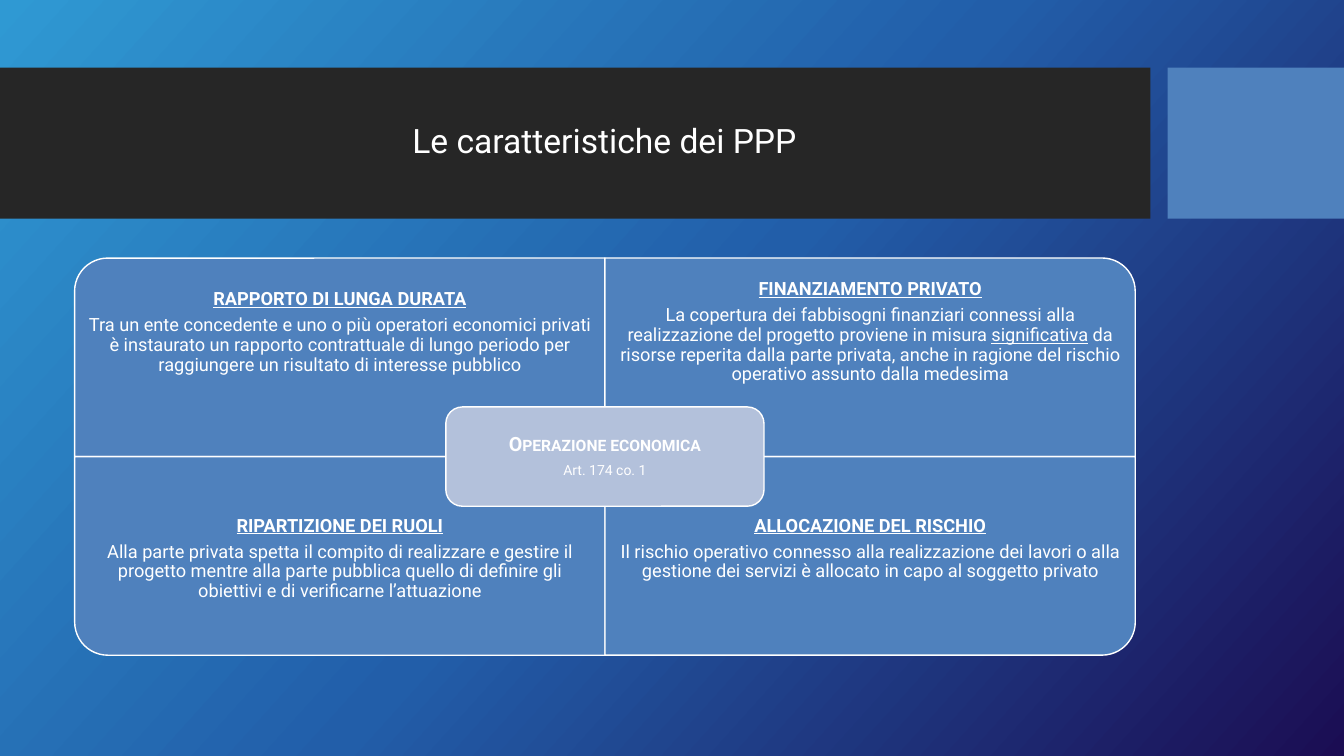
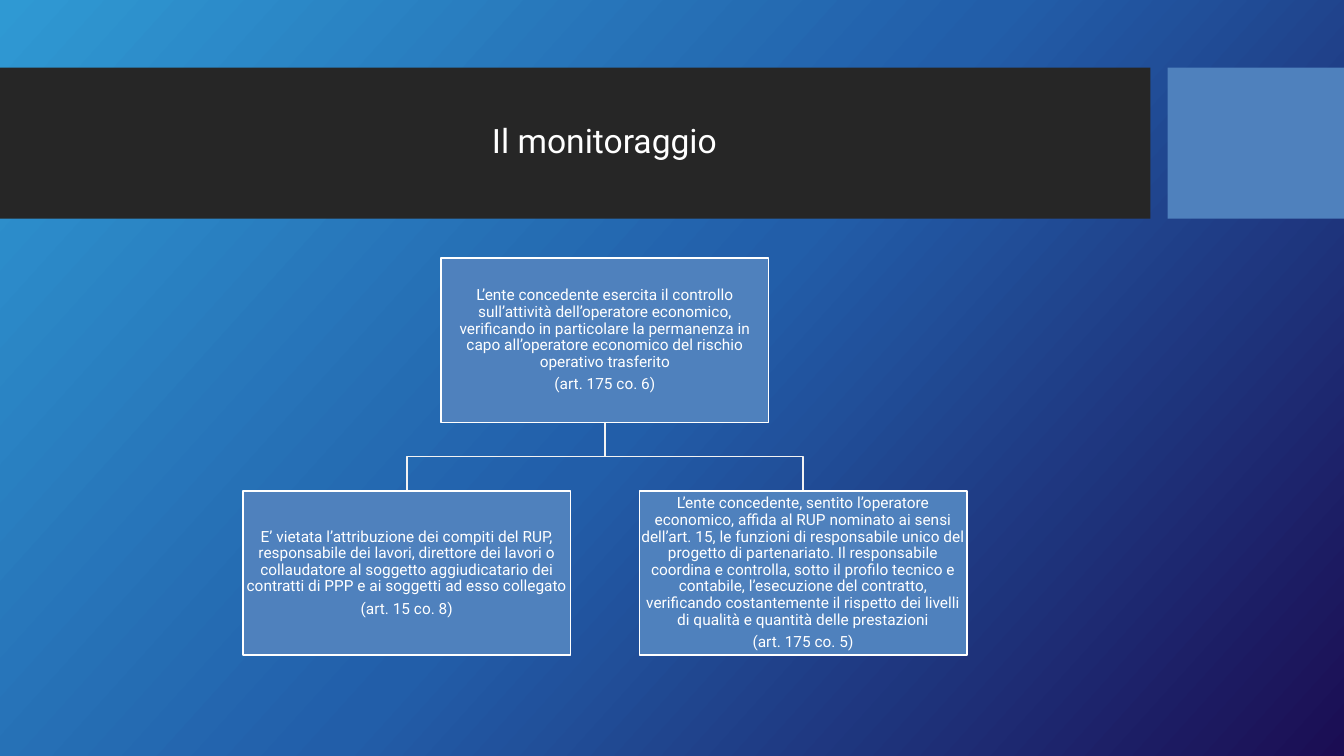
from collections import namedtuple
from copy import deepcopy

from pptx import Presentation
from pptx.dml.color import RGBColor
from pptx.enum.shapes import MSO_SHAPE
from pptx.enum.text import MSO_ANCHOR, MSO_AUTO_SIZE, PP_ALIGN
from pptx.util import Inches, Pt

Box = namedtuple("Box", "left top width height")

FONT = "Roboto"
WHITE, BLUE, PALE_BLUE, DARK, CONNECTOR_GREY = "FFFFFF", "4F81BD", "B3C1DB", "262626", "F2F2F2"
GRADIENT = [(0, "2F99D3"), (0.5, "225EA9"), (1, "1B0D53")]
BANDS = [(Box(0, 0.67, 11.41, 1.5), DARK), (Box(11.58, 0.67, 1.75, 1.5), BLUE)]
TITLE_BOX = Box(0.74, 0.82, 10.51, 1.18)
DIAGRAM_BOX = Box(0.74, 2.56, 10.52, 3.94)
HEADING = {"bold": True, "underline": True}
UNDERLINED = {"underline": True}

QUADRANTS = [
    (270, "RAPPORTO DI LUNGA DURATA", [
        ("Tra un ente concedente e uno o più operatori economici privati è instaurato un rapporto "
         "contrattuale di lungo periodo per raggiungere un risultato di interesse pubblico", {})]),
    (0, "FINANZIAMENTO PRIVATO", [
        ("La copertura dei fabbisogni finanziari connessi alla realizzazione del progetto proviene "
         "in misura ", {}),
        ("significativa", UNDERLINED),
        (" da risorse reperita dalla parte privata, anche in ragione del rischio operativo assunto "
         "dalla medesima", {})]),
    (180, "RIPARTIZIONE DEI RUOLI", [
        ("Alla parte privata spetta il compito di realizzare e gestire il progetto mentre alla parte "
         "pubblica quello di definire gli obiettivi e di verificarne l’attuazione", {})]),
    (90, "ALLOCAZIONE DEL RISCHIO", [
        ("Il rischio operativo connesso alla realizzazione dei lavori o alla gestione dei servizi è "
         "allocato in capo al soggetto privato", {})]),
]

PARENT_NODE = (
    "L’ente concedente esercita il controllo sull’attività dell’operatore economico, verificando in "
    "particolare la permanenza in capo all’operatore economico del rischio operativo trasferito",
    "(art. 175 co. 6)")
CHILD_NODES = [
    ("E’ vietata l’attribuzione dei compiti del RUP, responsabile dei lavori, direttore dei lavori o "
     "collaudatore al soggetto aggiudicatario dei contratti di PPP e ai soggetti ad esso collegato",
     "(art. 15 co. 8)"),
    ("L’ente concedente, sentito l’operatore economico, affida al RUP nominato ai sensi dell’art. 15, "
     "le funzioni di responsabile unico del progetto di partenariato. Il responsabile coordina e "
     "controlla, sotto il profilo tecnico e contabile, l’esecuzione del contratto, verificando "
     "costantemente il rispetto dei livelli di qualità e quantità delle prestazioni",
     "(art. 175 co. 5)"),
]


def color(hex_value):
    """Turn a hex string into a colour."""
    return RGBColor.from_string(hex_value)


def set_attributes(target, values):
    """Set each named attribute of an object."""
    for name, value in values.items():
        setattr(target, name, value)


def place(shape, box):
    """Move and size a shape to a box given in inches."""
    set_attributes(shape, {name: Inches(value) for name, value in box._asdict().items()})


def format_run(run, size, values):
    """Give a run the deck's font with its own size and style."""
    set_attributes(run.font, {"name": FONT, "size": Pt(size), "bold": False, **values})
    run.font.color.rgb = color(WHITE)


def add_box(slide, kind, box, fill, line=None):
    """Add a flat preset shape with a fill and an optional outline."""
    shape = slide.shapes.add_shape(kind, *map(Inches, box))
    shape.shadow.inherit = False
    shape.fill.solid()
    shape.fill.fore_color.rgb = color(fill)
    if line:
        shape.line.color.rgb = color(line)
        shape.line.width = Pt(1)
    else:
        shape.line.fill.background()
    return shape


def write_text(shape, paragraphs, inset, anchor=MSO_ANCHOR.MIDDLE):
    """Fill a shape with centred paragraphs given as size and runs."""
    frame = shape.text_frame
    margins = {f"margin_{side}": Inches(inset) for side in ("left", "top", "right", "bottom")}
    set_attributes(frame, {"word_wrap": True, "vertical_anchor": anchor, **margins})
    for index, (size, runs) in enumerate(paragraphs):
        paragraph = frame.add_paragraph() if index else frame.paragraphs[0]
        set_attributes(paragraph, {"alignment": PP_ALIGN.CENTER, "line_spacing": 0.9,
                                   "space_after": Pt(round(0.35 * size, 2))})
        for text, values in runs:
            run = paragraph.add_run()
            run.text = text
            format_run(run, size, values)


def style_layout(layout, slide):
    """Give the layout its gradient, bands and title position."""
    fill = layout.background.fill
    fill.gradient()
    fill.gradient_angle = 318
    first_stop = fill.gradient_stops[0]._gs
    first_stop.addnext(deepcopy(first_stop))
    for stop, (position, hex_value) in zip(fill.gradient_stops, GRADIENT):
        stop.position = position
        stop.color.rgb = color(hex_value)
    for index, (box, hex_value) in enumerate(BANDS):
        band = add_box(slide, MSO_SHAPE.RECTANGLE, box, hex_value)._element
        band.nvSpPr.cNvPr.set("id", str(20 + index))
        layout.shapes._spTree.insert(2 + index, band)
    place(layout.placeholders[0], TITLE_BOX)


def write_title(slide, text):
    """Write the slide title in the title placeholder."""
    title = slide.shapes.title
    title.text = text
    set_attributes(title.text_frame, {"vertical_anchor": MSO_ANCHOR.MIDDLE, "word_wrap": True,
                                      "auto_size": MSO_AUTO_SIZE.NONE})
    paragraph = title.text_frame.paragraphs[0]
    set_attributes(paragraph, {"alignment": PP_ALIGN.CENTER, "line_spacing": 0.9})
    format_run(paragraph.runs[0], 24, {})


def add_quadrant(slide, box, rotation, heading, body, is_lower):
    """Draw one quadrant with its outer corner rounded and its text away from the centre."""
    outline = box
    if rotation % 180:
        shift = (box.width - box.height) / 2
        outline = Box(box.left + shift, box.top - shift, box.height, box.width)
    shape = add_box(slide, MSO_SHAPE.ROUND_1_RECTANGLE, outline, BLUE, WHITE)
    shape.rotation = rotation
    text_height = box.height * 0.75
    text_top = box.top + (box.height - text_height if is_lower else 0)
    text_box = slide.shapes.add_textbox(*map(Inches, (box.left, text_top, box.width, text_height)))
    write_text(text_box, [(13, [(heading, HEADING)]), (13, body)], 0.1,
               MSO_ANCHOR.TOP if is_lower else MSO_ANCHOR.MIDDLE)


def add_matrix(slide, box):
    """Draw the four quadrants and the label over their centre."""
    width, height = box.width / 2, box.height / 2
    for index, (rotation, heading, body) in enumerate(QUADRANTS):
        row, column = divmod(index, 2)
        quadrant = Box(box.left + column * width, box.top + row * height, width, height)
        add_quadrant(slide, quadrant, rotation, heading, body, row == 1)
    label_width, label_height = width * 0.6, height / 2
    label_box = Box(box.left + width - label_width / 2, box.top + height - label_height / 2,
                    label_width, label_height)
    label = add_box(slide, MSO_SHAPE.ROUNDED_RECTANGLE, label_box, PALE_BLUE, WHITE)
    write_text(label, [(14, [("Operazione economica", {"bold": True})]),
                       (10, [("Art. 174 co. 1", {})])], 0.1)
    label.text_frame.paragraphs[0].runs[0].font._element.set("cap", "small")


def add_branch(slide, start, end):
    """Draw a right-angled line from a parent node down to a child node."""
    middle = (start[1] + end[1]) / 2
    points = [(Inches(x), Inches(y)) for x, y in (start, (start[0], middle), (end[0], middle), end)]
    builder = slide.shapes.build_freeform(*points[0])
    builder.add_line_segments(points[1:], close=False)
    branch = builder.convert_to_shape()
    branch.shadow.inherit = False
    branch.fill.background()
    branch.line.color.rgb = color(CONNECTOR_GREY)
    branch.line.width = Pt(1)


def add_node(slide, box, texts):
    """Draw one node of the tree."""
    node = add_box(slide, MSO_SHAPE.RECTANGLE, box, BLUE, WHITE)
    write_text(node, [(11, [(text, {})]) for text in texts], 0.01)


def add_tree(slide, box):
    """Draw a parent node and its two children, centred in the box."""
    width, height, gap = 3.25, 1.63, 0.68
    center = box.left + box.width / 2
    child_top = box.top + height + gap
    child_centers = [center + side * (width + gap) / 2 for side in (-1, 1)]
    for child_center in child_centers:
        add_branch(slide, (center, box.top + height), (child_center, child_top))
    add_node(slide, Box(center - width / 2, box.top, width, height), PARENT_NODE)
    for child_center, texts in zip(child_centers, CHILD_NODES):
        add_node(slide, Box(child_center - width / 2, child_top, width, height), texts)


def main():
    """Build and save the presentation."""
    presentation = Presentation()
    set_attributes(presentation, {"slide_width": Inches(13.33), "slide_height": Inches(7.5)})
    layout = presentation.slide_layouts[5]
    contents = [("Le caratteristiche dei PPP", add_matrix), ("Il monitoraggio", add_tree)]
    for index, (title, add_diagram) in enumerate(contents):
        slide = presentation.slides.add_slide(layout)
        if index == 0:
            style_layout(layout, slide)
        write_title(slide, title)
        add_diagram(slide, DIAGRAM_BOX)
    presentation.save("out.pptx")


if __name__ == "__main__":
    main()
